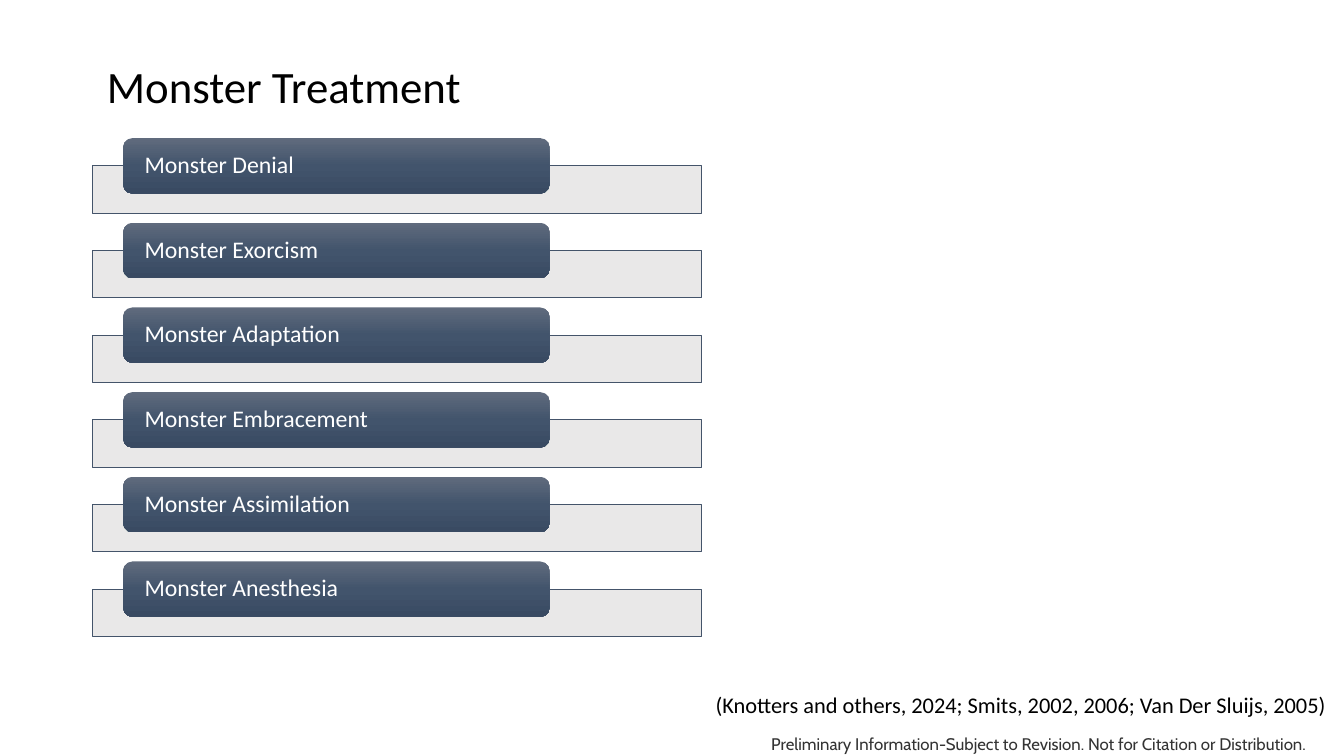
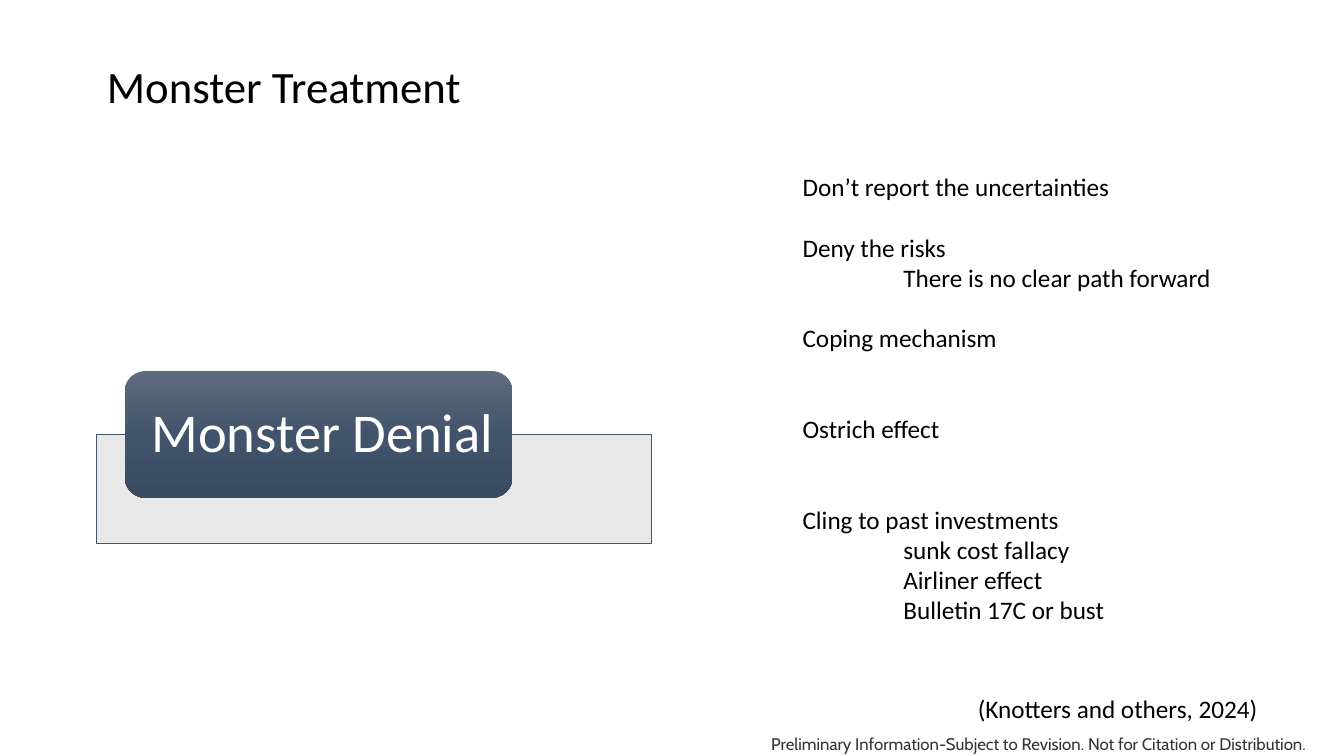
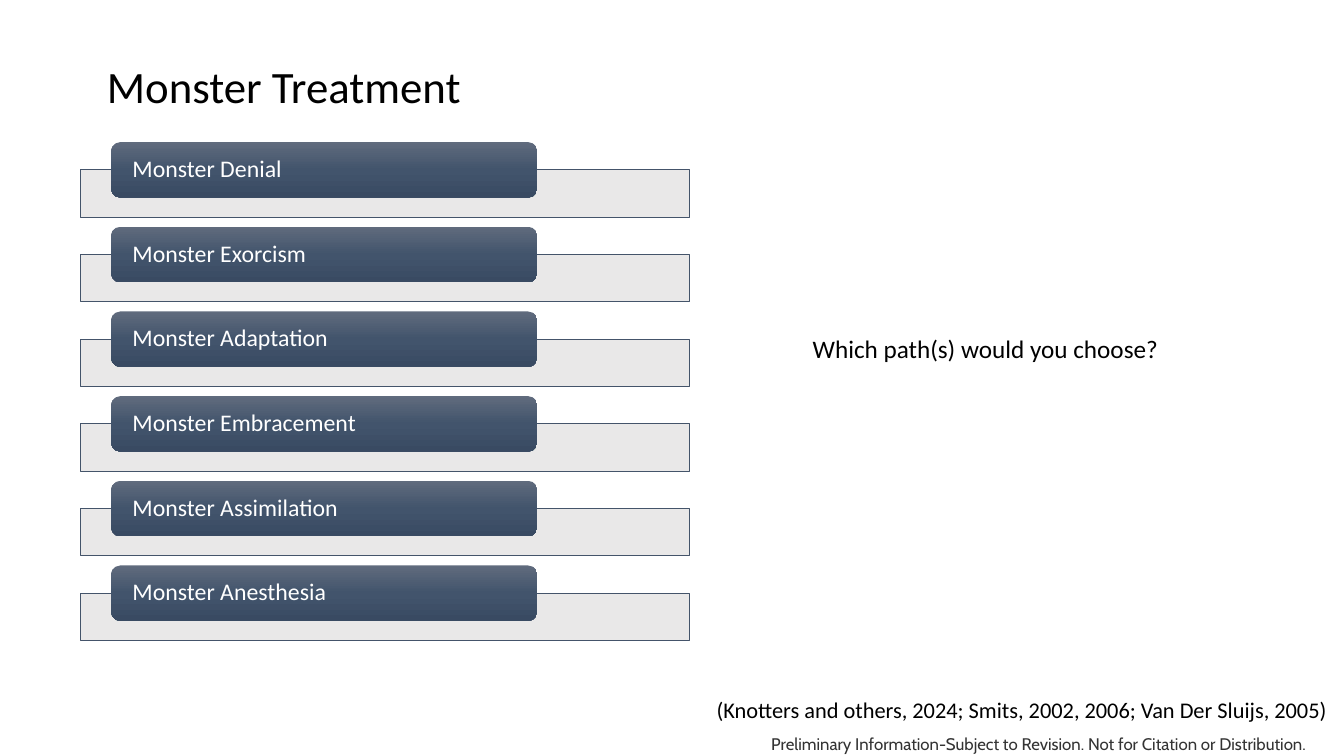
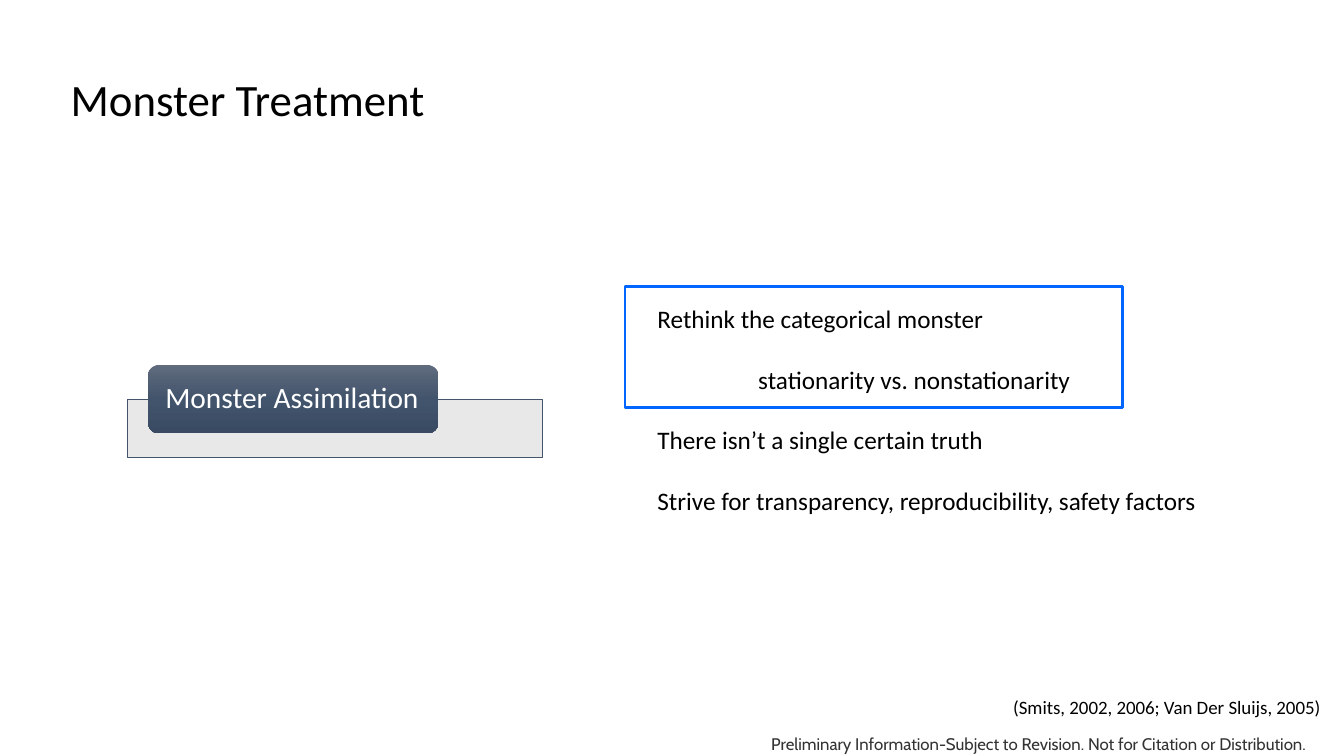
from dataclasses import dataclass

from lxml import etree
from pptx import Presentation
from pptx import util as u
from pptx.dml.color import RGBColor
from pptx.enum import shapes, text
from pptx.oxml import ns


@dataclass(frozen=True)
class Theme:
    font: str = "Calibri"
    footer_font: str = "Cabin"
    ink: str = "000000"
    footer_ink: str = "333333"
    light: str = "FFFFFF"
    bar: str = "E7E6E6"
    bar_line: str = "44546A"
    accent: str = "0066FF"
    card_stops: tuple = ((0, "606B7D"), (50, "42546C"), (100, "394A62"))
    title_size: float = 32
    body_size: float = 18
    card_size: float = 17
    source_size: float = 16
    footer_size: float = 12
    blank_line: float = 21.6


FOOTER = "Preliminary Information-Subject to Revision. Not for Citation or Distribution."
TITLE = "Monster Treatment"
ALL_SOURCES = "(Knotters and others, 2024; Smits, 2002, 2006; Van Der Sluijs, 2005)"
TREATMENTS = ["Denial", "Exorcism", "Adaptation", "Embracement", "Assimilation", "Anesthesia"]
TITLE_AREA = (0.96, 0.33, 11.46, 1.1)
ROW_PITCH = 0.84
TITLE_ONLY, TITLE_AND_CONTENT = 5, 1


class Builder:
    def __init__(self, theme):
        self.theme = theme
        self.deck = Presentation()
        self.deck.slide_width = u.Inches(13.33)
        self.deck.slide_height = u.Inches(7.5)
        self.page = None

    def start(self, layout, area=TITLE_AREA):
        self.page = self.deck.slides.add_slide(self.deck.slide_layouts[layout])
        self.label(FOOTER, (7.55, 7.23, 5.62, 0.27), self.theme.footer_size,
                   font=self.theme.footer_font, color=self.theme.footer_ink)
        title = self.page.shapes.title
        self.place(title, area)
        title.text_frame.text = TITLE
        title.text_frame.vertical_anchor = text.MSO_ANCHOR.MIDDLE
        title.text_frame.auto_size = text.MSO_AUTO_SIZE.NONE
        self.style(title.text_frame.paragraphs[0], self.theme.title_size, spacing=0.9)

    def place(self, box, area):
        box.left, box.top, box.width, box.height = (u.Inches(value) for value in area)

    def style(self, para, size, font=None, color=None, spacing=1.0):
        para.alignment = text.PP_ALIGN.LEFT
        para.line_spacing = spacing
        for span in para.runs:
            span.font.name = font or self.theme.font
            span.font.size = u.Pt(size)
            span.font.color.rgb = RGBColor.from_string(color or self.theme.ink)

    def label(self, words, area, size, **look):
        box = self.page.shapes.add_textbox(*(u.Inches(value) for value in area))
        box.text_frame.word_wrap = True
        box.text_frame.text = words
        self.style(box.text_frame.paragraphs[0], size, **look)

    def source(self, words, area, size):
        self.label(words, area, size, spacing=1.07)

    def body(self, items, area):
        box = self.page.placeholders[1]
        self.place(box, area)
        frame = box.text_frame
        frame.auto_size = text.MSO_AUTO_SIZE.NONE
        frame.vertical_anchor = text.MSO_ANCHOR.TOP
        frame.text = "\n".join(words for words, level, blanks in items)
        for para, (words, level, blanks) in zip(frame.paragraphs, items):
            para.level = level
            properties = para._p.get_or_add_pPr()
            properties.set("marL", str(u.Inches(level)))
            properties.set("indent", "0")
            etree.SubElement(properties, ns.qn("a:buNone"))
            para.space_before = u.Pt(blanks * self.theme.blank_line)
            para.space_after = u.Pt(0)
            self.style(para, self.theme.body_size)

    def shape(self, kind, area, line=None, width=0.5):
        box = self.page.shapes.add_shape(kind, *(u.Inches(value) for value in area))
        box.shadow.inherit = False
        if line:
            box.line.color.rgb = RGBColor.from_string(line)
            box.line.width = u.Pt(width)
        else:
            box.line.fill.background()
        return box

    def frame(self, area):
        box = self.shape(shapes.MSO_SHAPE.RECTANGLE, area, self.theme.accent, 2)
        box.fill.background()

    def card(self, words, left, top, width, height, size):
        bar = self.shape(shapes.MSO_SHAPE.RECTANGLE,
                         (left, top + height / 2, width, height * 0.855), self.theme.bar_line)
        bar.fill.solid()
        bar.fill.fore_color.rgb = RGBColor.from_string(self.theme.bar)
        tint = bar._element.spPr.find(f"{ns.qn('a:solidFill')}/{ns.qn('a:srgbClr')}")
        etree.SubElement(tint, ns.qn("a:alpha"), val="90000")

        box = self.shape(shapes.MSO_SHAPE.ROUNDED_RECTANGLE,
                         (left + width * 0.05, top, width * 0.7, height))
        box.fill.gradient()
        box.fill.gradient_angle = 270
        stops = box._element.spPr.find(f"{ns.qn('a:gradFill')}/{ns.qn('a:gsLst')}")
        stops.clear()
        for position, color in self.theme.card_stops:
            stop = etree.SubElement(stops, ns.qn("a:gs"), pos=str(position * 1000))
            etree.SubElement(stop, ns.qn("a:srgbClr"), val=color)

        frame = box.text_frame
        frame.word_wrap = True
        frame.vertical_anchor = text.MSO_ANCHOR.MIDDLE
        frame.margin_left = u.Inches(width * 0.026 + height * 0.05)
        frame.margin_right = frame.margin_top = frame.margin_bottom = 0
        frame.text = words
        self.style(frame.paragraphs[0], size, color=self.theme.light, spacing=0.9)

    def treatment_list(self, left, top):
        for row, name in enumerate(TREATMENTS):
            self.card(f"Monster {name}", left, top + row * ROW_PITCH, 6.04, 0.55,
                      self.theme.card_size)


def main():
    theme = Theme()
    builder = Builder(theme)

    builder.start(TITLE_ONLY)
    builder.treatment_list(0.92, 1.37)
    builder.source(ALL_SOURCES, (7, 6.79, 6.32, 0.38), theme.source_size)

    builder.start(TITLE_AND_CONTENT)
    builder.card("Monster Denial", 0.96, 3.68, 5.5, 1.26, 39)
    builder.source("(Knotters and others, 2024)", (9.6, 6.81, 3.6, 0.41), theme.body_size)
    builder.body([
        ("Don’t report the uncertainties", 0, 0),
        ("Deny the risks", 0, 1),
        ("There is no clear path forward", 1, 0),
        ("Coping mechanism", 0, 1),
        ("Ostrich effect", 0, 2),
        ("Cling to past investments", 0, 2),
        ("sunk cost fallacy", 1, 0),
        ("Airliner effect", 1, 0),
        ("Bulletin 17C or bust", 1, 0),
    ], (7.86, 1.65, 5.3, 4.64))

    builder.start(TITLE_AND_CONTENT)
    builder.treatment_list(0.8, 1.41)
    builder.source(ALL_SOURCES, (7.01, 6.84, 6.32, 0.38), theme.source_size)
    builder.body([("Which path(s) would you choose?", 0, 0)], (7.96, 3.26, 4.28, 0.4))

    builder.start(TITLE_AND_CONTENT, (0.6, 0.6, 8.59, 0.82))
    builder.card("Monster Assimilation", 1.26, 3.62, 4.12, 0.68, 21)
    builder.source("(Smits, 2002, 2006; Van Der Sluijs, 2005)", (9.95, 6.84, 3.35, 0.33), 13.5)
    builder.body([
        ("Rethink the categorical monster", 0, 0),
        ("stationarity vs. nonstationarity", 1, 1),
        ("There isn’t a single certain truth", 0, 1),
        ("Strive for transparency, reproducibility, safety factors", 0, 1),
    ], (6.42, 2.96, 6.21, 2.52))
    builder.frame((6.2, 2.84, 4.93, 1.2))

    builder.deck.save("out.pptx")


if __name__ == "__main__":
    main()
